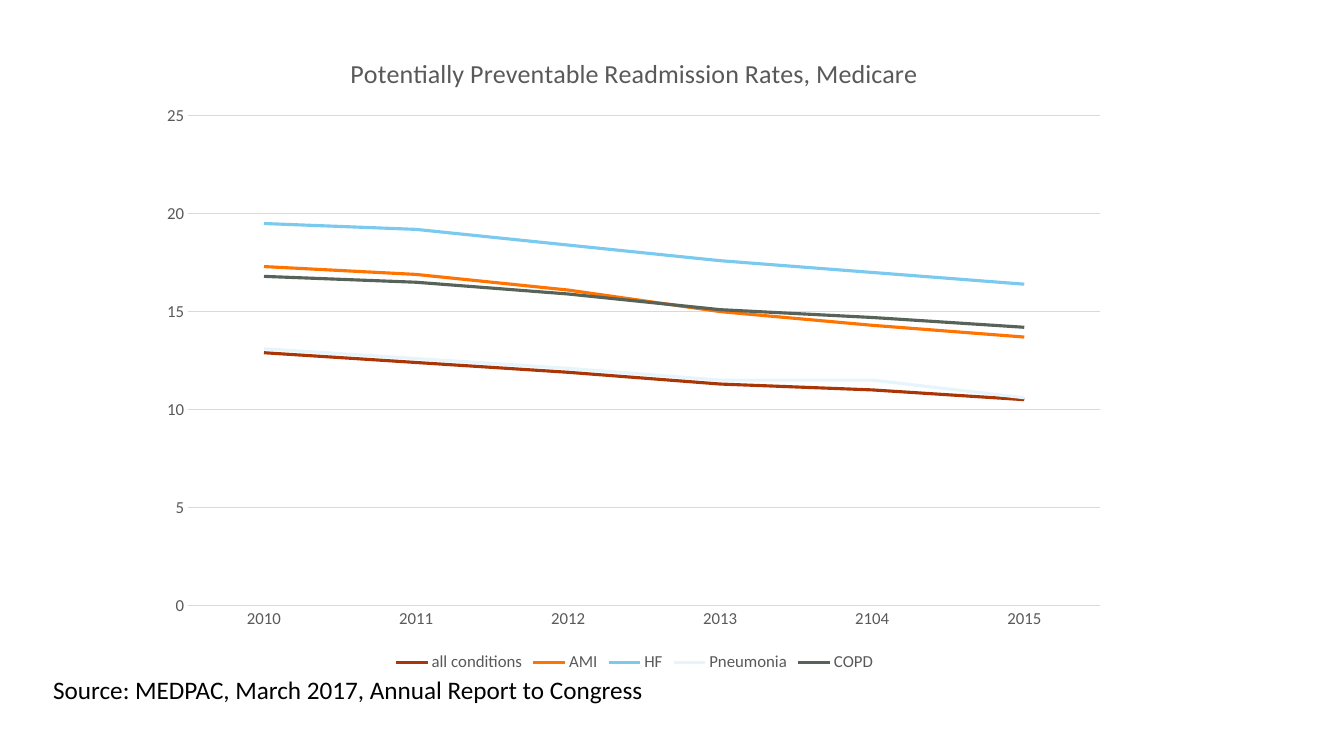
from dataclasses import dataclass

from pptx import Presentation
from pptx.chart.data import CategoryChartData as ChartData
from pptx.dml.color import RGBColor
from pptx.enum.chart import XL_CHART_TYPE as Kind
from pptx.enum.chart import XL_LEGEND_POSITION as Place
from pptx.enum.chart import XL_TICK_MARK as Tick
from pptx.enum.text import MSO_AUTO_SIZE as Fit
from pptx.oxml import parse_xml
from pptx.oxml.ns import nsdecls, qn
from pptx.util import Cm, Pt

FACE = "Calibri"
BLACK = RGBColor(0x00, 0x00, 0x00)
GRAY = RGBColor(0x59, 0x59, 0x59)
PALE = RGBColor(0xD9, 0xD9, 0xD9)
RUST = RGBColor(0xAA, 0x36, 0x07)
ORANGE = RGBColor(0xFF, 0x73, 0x00)
SKY = RGBColor(0x7A, 0xC9, 0xEF)
ICE = RGBColor(0xE6, 0xF5, 0xFC)
MOSS = RGBColor(0x57, 0x62, 0x58)

YEARS = ["2010", "2011", "2012", "2013", "2104", "2015"]
PLOT = {"x": 0.04, "y": 0.13, "w": 0.94, "h": 0.76}


@dataclass
class Rate:
    name: str
    vals: tuple[float, ...]
    color: RGBColor


RATES = [
    Rate("all conditions", (12.9, 12.4, 11.9, 11.3, 11, 10.5), RUST),
    Rate("AMI", (17.3, 16.9, 16.1, 15, 14.3, 13.7), ORANGE),
    Rate("HF", (19.5, 19.2, 18.4, 17.6, 17, 16.4), SKY),
    Rate("Pneumonia", (13.1, 12.6, 12.1, 11.5, 11.5, 10.6), ICE),
    Rate("COPD", (16.8, 16.5, 15.9, 15.1, 14.7, 14.2), MOSS),
]


def set_font(font, size: float, color: RGBColor) -> None:
    font.name = FACE
    font.size = Pt(size)
    font.bold = False
    font.color.rgb = color


def set_line(line, color: RGBColor, width: float) -> None:
    line.color.rgb = color
    line.width = Pt(width)


def set_plot(chart) -> None:
    area = chart.element.find(".//" + qn("c:plotArea"))
    for old in area.findall(qn("c:layout")):
        area.remove(old)
    sizes = "".join(f'<c:{key} val="{val}"/>' for key, val in PLOT.items())
    area.insert(0, parse_xml(
        f'<c:layout {nsdecls("c")}><c:manualLayout>'
        '<c:layoutTarget val="inner"/><c:xMode val="edge"/><c:yMode val="edge"/>'
        f"{sizes}</c:manualLayout></c:layout>"))


def add_rates(slide) -> None:
    data = ChartData(number_format="General")
    data.categories = YEARS
    for rate in RATES:
        data.add_series(rate.name, rate.vals)
    chart = slide.shapes.add_chart(
        Kind.LINE, Cm(3.76), Cm(0.81), Cm(24.46), Cm(16.23), data).chart
    set_font(chart.font, 10, BLACK)

    chart.has_title = True
    title = chart.chart_title.text_frame
    title.text = "Potentially Preventable Readmission Rates, Medicare"
    set_font(title.paragraphs[0].font, 18.6, GRAY)
    chart.chart_title.include_in_layout = False

    chart.has_legend = True
    chart.legend.position = Place.BOTTOM
    chart.legend.include_in_layout = False
    set_font(chart.legend.font, 12, GRAY)

    years, scale = chart.category_axis, chart.value_axis
    for axis in (years, scale):
        axis.major_tick_mark = axis.minor_tick_mark = Tick.NONE
        set_font(axis.tick_labels.font, 12, GRAY)
    set_line(years.format.line, PALE, 0.75)
    scale.format.line.fill.background()
    scale.minimum_scale, scale.maximum_scale, scale.major_unit = 0, 25, 5
    set_line(scale.major_gridlines.format.line, PALE, 0.75)

    for line, rate in zip(chart.plots[0].series, RATES):
        line.smooth = False
        set_line(line.format.line, rate.color, 2.25)
    set_plot(chart)


def add_source(slide) -> None:
    frame = slide.shapes.add_textbox(
        Cm(1.09), Cm(16.87), Cm(15.54), Cm(1.02)).text_frame
    frame.word_wrap = False
    frame.auto_size = Fit.SHAPE_TO_FIT_TEXT
    frame.text = "Source: MEDPAC, March 2017, Annual Report to Congress"
    set_font(frame.paragraphs[0].font, 18, BLACK)


def main() -> None:
    deck = Presentation()
    deck.slide_width, deck.slide_height = Cm(33.87), Cm(19.05)
    slide = deck.slides.add_slide(deck.slide_layouts[6])
    add_rates(slide)
    add_source(slide)
    deck.save("out.pptx")


if __name__ == "__main__":
    main()
